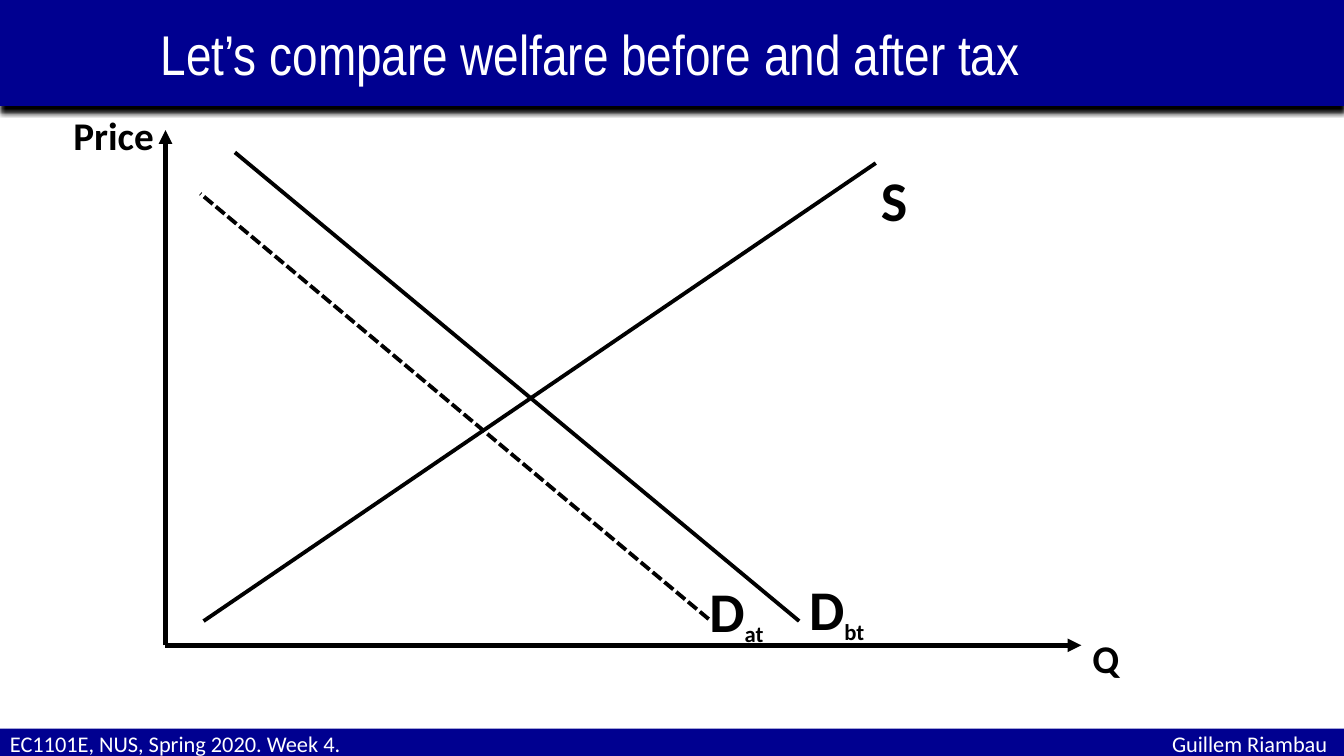
from lxml import etree
from pptx import Presentation
from pptx.dml.color import RGBColor
from pptx.enum.dml import MSO_LINE
from pptx.enum.shapes import MSO_CONNECTOR, MSO_SHAPE
from pptx.enum.text import MSO_ANCHOR, MSO_AUTO_SIZE, PP_ALIGN
from pptx.oxml.ns import qn
from pptx.util import Cm, Pt

NAVY = RGBColor(0x00, 0x00, 0x90)
BLACK = RGBColor(0x00, 0x00, 0x00)
WHITE = RGBColor(0xFF, 0xFF, 0xFF)
STRAIGHT = MSO_CONNECTOR.STRAIGHT
RECTANGLE = MSO_SHAPE.RECTANGLE
DASHED = MSO_LINE.SQUARE_DOT
MIDDLE = MSO_ANCHOR.MIDDLE
LEFT = PP_ALIGN.LEFT
NO_AUTOFIT = MSO_AUTO_SIZE.NONE

SLIDE_WIDTH, SLIDE_HEIGHT = Cm(33.87), Cm(19.05)
ORIGIN = (4.17, 16.26)
AXIS_WIDTH, CURVE_WIDTH = 3.25, 2.75


def set_font(font, name, size, color, bold=False):
    font.name = name
    font.size = Pt(size)
    font.color.rgb = color
    font.bold = bold


def style_bar(bar, top, height, text, font_name, size):
    """Full-width navy bar with a shadow straight below it."""
    bar.left, bar.top, bar.width, bar.height = 0, Cm(top), SLIDE_WIDTH, Cm(height)
    bar.fill.solid()
    bar.fill.fore_color.rgb = NAVY
    bar.line.fill.background()
    bar.shadow.inherit = False
    effects = bar._element.spPr.find(qn("a:effectLst"))
    shadow = etree.SubElement(effects, qn("a:outerShdw"), blurRad=str(Pt(4)),
                              dist=str(Pt(4)), dir="5400000", rotWithShape="0")
    etree.SubElement(shadow, qn("a:srgbClr"), val=str(BLACK))

    frame = bar.text_frame
    frame.text = text
    frame.auto_size = NO_AUTOFIT
    frame.vertical_anchor = MIDDLE
    paragraph = frame.paragraphs[0]
    paragraph.alignment = LEFT
    set_font(paragraph.font, font_name, size, WHITE)
    return frame


def add_right_tab(paragraph, position):
    tabs = etree.SubElement(paragraph._p.get_or_add_pPr(), qn("a:tabLst"))
    etree.SubElement(tabs, qn("a:tab"), pos=str(Cm(position)), algn="r")


def add_line(slide, start, end, width, dash=None, arrow=False):
    line = slide.shapes.add_connector(STRAIGHT, *map(Cm, start + end))
    line.line.color.rgb = BLACK
    line.line.width = Pt(width)
    if dash:
        line.line.dash_style = dash
    properties = line._element.spPr
    if arrow:
        etree.SubElement(properties.find(qn("a:ln")), qn("a:tailEnd"), type="triangle")
    etree.SubElement(properties, qn("a:effectLst"))


def add_label(slide, left, top, text, size, subscript=""):
    height = 1.95 if size == 40 else 1.45
    label = slide.shapes.add_textbox(Cm(left), Cm(top), Cm(3.86), Cm(height))
    label.text_frame.word_wrap = True
    paragraph = label.text_frame.paragraphs[0]
    set_font(paragraph.font, "Calibri", size, BLACK, bold=True)
    paragraph.add_run().text = text
    if subscript:
        index = paragraph.add_run()
        index.text = subscript
        index.font.size = Pt(28)
        index._r.get_or_add_rPr().set("baseline", "-25000")


def main():
    prs = Presentation()
    prs.slide_width, prs.slide_height = SLIDE_WIDTH, SLIDE_HEIGHT
    slide = prs.slides.add_slide(prs.slide_layouts[5])

    # Title bar
    title = style_bar(slide.shapes.title, 0, 2.67,
                      "Let’s compare welfare before and after tax", "Arial Narrow", 40)
    title.margin_left = Cm(4.05)

    # Footer bar: course on the left, lecturer at a right tab
    footer_bar = slide.shapes.add_shape(RECTANGLE, 0, 0, SLIDE_WIDTH, Cm(1))
    footer = style_bar(footer_bar, 18.36, 0.76,
                       "EC1101E, NUS, Spring 2020. Week 4.\tGuillem Riambau", "Calibri", 16)
    footer.word_wrap = True
    footer.margin_right = 0
    add_right_tab(footer.paragraphs[0], 33.2)

    # Axes
    add_line(slide, ORIGIN, (ORIGIN[0], 3.28), AXIS_WIDTH, arrow=True)
    add_line(slide, ORIGIN, (27.25, ORIGIN[1]), AXIS_WIDTH, arrow=True)
    add_label(slide, 1.6, 2.67, "Price", 28)
    add_label(slide, 27.28, 15.85, "Q", 28)

    # Supply, demand before tax and demand after tax
    add_line(slide, (5.13, 15.65), (22.07, 4.11), CURVE_WIDTH)
    add_label(slide, 21.95, 4.04, "S", 40)
    add_line(slide, (20.14, 15.65), (5.92, 3.84), CURVE_WIDTH)
    add_label(slide, 20.14, 14.35, "D", 40, subscript="bt")
    add_line(slide, (17.86, 15.6), (5.05, 4.88), CURVE_WIDTH, dash=DASHED)
    add_label(slide, 17.63, 14.4, "D", 40, subscript="at")

    prs.save("out.pptx")


if __name__ == "__main__":
    main()
